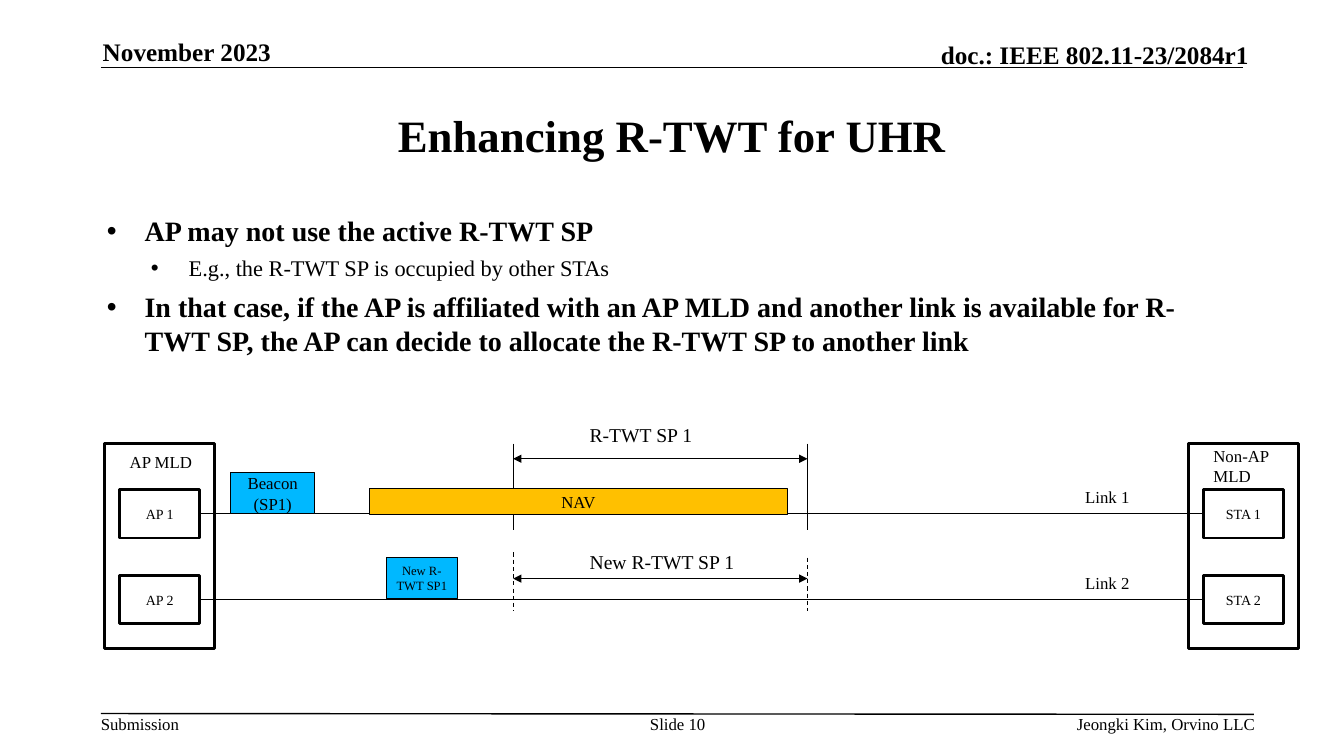
from lxml import etree
from pptx import Presentation
from pptx.dml.color import RGBColor
from pptx.enum.dml import MSO_LINE
from pptx.enum.shapes import MSO_CONNECTOR, MSO_SHAPE
from pptx.enum.text import MSO_ANCHOR, MSO_AUTO_SIZE, PP_ALIGN
from pptx.oxml.ns import qn
from pptx.util import Cm, Pt

BLACK = RGBColor(0x00, 0x00, 0x00)
FRAME_BLUE = RGBColor(0x00, 0xB8, 0xFF)
NAV_AMBER = RGBColor(0xFF, 0xC0, 0x00)
FONT = "Times New Roman"

LEFT, CENTER, RIGHT = PP_ALIGN.LEFT, PP_ALIGN.CENTER, PP_ALIGN.RIGHT
TOP, MIDDLE, BOTTOM = MSO_ANCHOR.TOP, MSO_ANCHOR.MIDDLE, MSO_ANCHOR.BOTTOM
NO_AUTOFIT = MSO_AUTO_SIZE.NONE
DASH = MSO_LINE.DASH
STRAIGHT = MSO_CONNECTOR.STRAIGHT
RECTANGLE = MSO_SHAPE.RECTANGLE

# Diagram geometry in centimetres
LINK_YS = (12.95, 15.11)
LINK_START, LINK_END = 5.03, 30.33
SP_START, SP_END = 12.93, 20.35
DEVICE_TOP = 11.18


def format_paragraph(paragraph, size, bold=False, align=LEFT):
    paragraph.alignment = align
    paragraph.font.name = FONT
    paragraph.font.size = Pt(size)
    paragraph.font.bold = bold
    paragraph.font.color.rgb = BLACK


def write(frame, text, size, bold=False, align=LEFT, anchor=TOP):
    frame.auto_size = NO_AUTOFIT
    frame.vertical_anchor = anchor
    frame.text = text
    for paragraph in frame.paragraphs:
        format_paragraph(paragraph, size, bold, align)


def place(shape, left, top, width, height):
    shape.left, shape.top = Cm(left), Cm(top)
    shape.width, shape.height = Cm(width), Cm(height)


def add_label(slide, text, box, size, wrap=True):
    frame = slide.shapes.add_textbox(*map(Cm, box)).text_frame
    frame.word_wrap = wrap
    write(frame, text, size)


def add_margin_text(slide, text, box, size, bold=False, align=LEFT, anchor=TOP):
    frame = slide.shapes.add_textbox(*map(Cm, box)).text_frame
    frame.word_wrap = True
    frame.margin_left = frame.margin_right = 0
    frame.margin_top = frame.margin_bottom = 0
    write(frame, text, size, bold, align, anchor)


def add_box(slide, box, text="", size=10, fill=None, line_width=2):
    rectangle = slide.shapes.add_shape(RECTANGLE, *map(Cm, box))
    rectangle.shadow.inherit = False
    if fill is None:
        rectangle.fill.background()
    else:
        rectangle.fill.solid()
        rectangle.fill.fore_color.rgb = fill
    rectangle.line.color.rgb = BLACK
    rectangle.line.width = Pt(line_width)
    if text:
        write(rectangle.text_frame, text, size, align=CENTER, anchor=MIDDLE)


def add_line(slide, start, end, width=0.75, dashed=False, arrows=False):
    line = slide.shapes.add_connector(STRAIGHT, *map(Cm, start + end))
    line.line.color.rgb = BLACK
    line.line.width = Pt(width)
    if dashed:
        line.line.dash_style = DASH
    if arrows:
        outline = line.line._get_or_add_ln()
        for tag in ("a:headEnd", "a:tailEnd"):
            etree.SubElement(outline, qn(tag), type="triangle")
    etree.SubElement(line._element.spPr, qn("a:effectLst"))


def add_header_and_footer(slide):
    add_line(slide, (2.54, 1.7), (31.32, 1.7), width=1)
    add_line(slide, (2.54, 17.98), (31.6, 18), width=1)
    add_margin_text(slide, "November 2023", (2.59, 0.91, 6.93, 0.76), 18,
                    bold=True, anchor=BOTTOM)
    add_margin_text(slide, "doc.: IEEE 802.11-23/2084r1",
                    (18.52, 0.99, 12.95, 0.76), 18,
                    bold=True, align=RIGHT, anchor=BOTTOM)
    for text, left, width, align in (
        ("Submission", 2.54, 2.01, LEFT),
        ("Slide 10", 16.1, 1.96, CENTER),
        ("Jeongki Kim, Orvino LLC", 19.84, 11.79, RIGHT),
    ):
        add_margin_text(slide, text, (left, 17.98, width, 0.51), 12, align=align)


def fill_title(slide):
    title = slide.shapes.title
    place(title, 2.54, 1.91, 28.78, 2.95)
    write(title.text_frame, "Enhancing R-TWT for UHR", 32,
          bold=True, align=CENTER, anchor=MIDDLE)


def fill_bullets(slide):
    body = slide.placeholders[1]
    place(body, 2.44, 5.26, 28.78, 11.63)
    points = (
        ("AP may not use the active R-TWT SP", 0),
        ("E.g., the R-TWT SP is occupied by other STAs", 1),
        ("In that case, if the AP is affiliated with an AP MLD and another "
         "link is available for R-TWT SP, the AP can decide to allocate the "
         "R-TWT SP to another link", 0),
    )
    write(body.text_frame, "\n".join(text for text, _ in points), 20, bold=True)
    for paragraph, (_, level) in zip(body.text_frame.paragraphs, points):
        paragraph.level = level
        paragraph.space_before = Pt(5 if level else 6)
        if level:
            format_paragraph(paragraph, 16)
        properties = paragraph._p.get_or_add_pPr()
        properties.set("marL", str(Cm(2.06 if level else 0.95)))
        properties.set("indent", str(-Cm(0.95)))
        bullet = etree.Element(qn("a:buChar"), char="•")
        properties.find(qn("a:spcBef")).addnext(bullet)


def add_device(slide, left, name, name_top, stations):
    add_box(slide, (left, DEVICE_TOP, 2.77, 5.16))
    add_label(slide, name, (left + 0.38, name_top, 2.36, 0.76), 12)
    for station, link_y in zip(stations, LINK_YS):
        add_box(slide, (left + 0.38, link_y - 0.61, 2.01, 1.22), station)


def add_service_period(slide, name, label_box, tops, bottom, arrow_y, dashed):
    for x, top in zip((SP_START, SP_END), tops):
        add_line(slide, (x, top), (x, bottom), dashed=dashed)
    add_line(slide, (SP_START, arrow_y), (SP_END, arrow_y), arrows=True)
    add_label(slide, name, label_box, 14, wrap=False)


def add_link_diagram(slide):
    # Links between the two devices
    for number, link_y in enumerate(LINK_YS, start=1):
        add_line(slide, (LINK_START, link_y), (LINK_END, link_y))
        add_label(slide, f"Link {number}",
                  (27.1, link_y - 0.8, 2.36, 0.76), 12)
    add_device(slide, 2.64, "AP MLD", 11.25, ("AP 1", "AP 2"))
    add_device(slide, 29.95, "Non-AP MLD", 11.1, ("STA 1", "STA 2"))

    # Service periods
    add_service_period(slide, "R-TWT SP 1", (14.61, 10.52, 3.12, 0.86),
                       (DEVICE_TOP, DEVICE_TOP), 13.36, 11.56, dashed=False)
    add_service_period(slide, "New R-TWT SP 1", (14.61, 13.72, 4.19, 0.86),
                       (13.92, 14.05), 15.39, 14.58, dashed=True)

    # Frames sent on the links
    for text, box, size, fill in (
        ("Beacon\n(SP1)", (5.82, 11.91, 2.11, 1.04), 12, FRAME_BLUE),
        ("New R-TWT SP1", (9.73, 14.05, 1.8, 1.04), 9, FRAME_BLUE),
        ("NAV", (9.32, 12.32, 10.52, 0.64), 12, NAV_AMBER),
    ):
        add_box(slide, box, text, size, fill, line_width=0.75)


def main():
    deck = Presentation()
    deck.slide_width, deck.slide_height = Cm(33.87), Cm(19.05)
    slide = deck.slides.add_slide(deck.slide_layouts[1])
    add_header_and_footer(slide)
    fill_title(slide)
    fill_bullets(slide)
    add_link_diagram(slide)
    deck.save("out.pptx")


if __name__ == "__main__":
    main()
